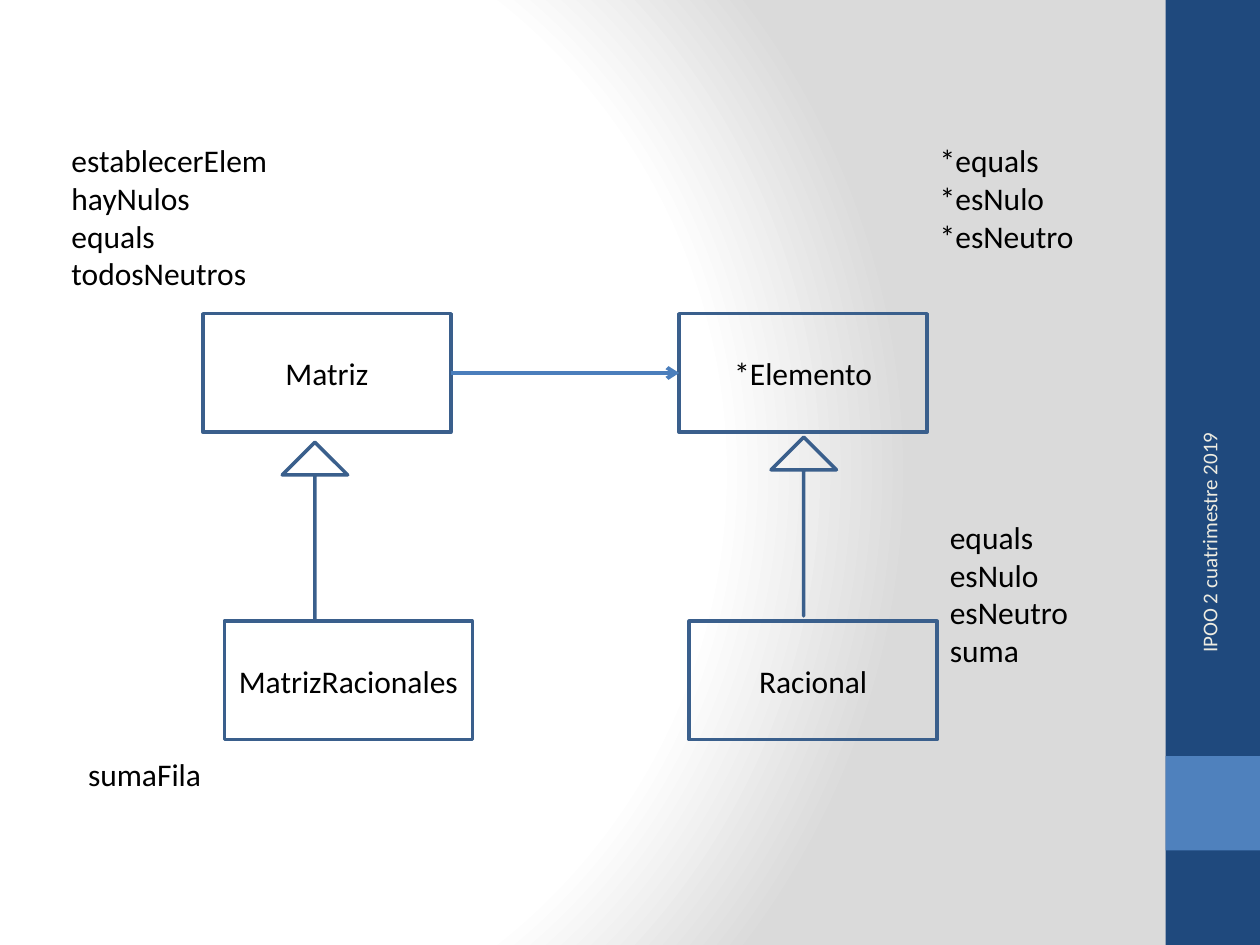
from dataclasses import dataclass

from pptx import Presentation
from pptx.dml.color import RGBColor
from pptx.enum.shapes import MSO_CONNECTOR as Connector, MSO_SHAPE as Preset
from pptx.enum.text import MSO_ANCHOR as Anchor, MSO_AUTO_SIZE as AutoSize, PP_ALIGN as Align
from pptx.oxml import parse_xml
from pptx.oxml.ns import nsdecls
from pptx.util import Pt


@dataclass(frozen=True)
class Theme:
    font: str = "Calibri"
    body_size: float = 18
    footer_size: float = 12
    text: str = "000000"
    footer_text: str = "EEECE1"
    sidebar: str = "1F497D"
    accent: str = "4F81BD"
    outline: str = "3A5F8C"
    association: str = "4B7EBC"
    outline_width: float = 2
    association_width: float = 2.25
    background_stops: tuple = ((0, "FFFFFF"), (75, "FFFFFF"), (100, "DADADA"))
    background_focus: tuple = (("l", 20), ("t", 50), ("r", 100), ("b", 50))


THEME = Theme()
CLASS_WIDTH, CLASS_HEIGHT = 141.8, 67.7
ARROW_WIDTH, ARROW_HEIGHT = 37.4, 102.2
TOP_ROW, BOTTOM_ROW = 179.3, 355


def write_text(frame, text, size=THEME.body_size, color=THEME.text,
               align=Align.LEFT, anchor=Anchor.TOP, wrap=True):
    """Write each line of the text as a paragraph with one format."""
    frame.word_wrap = wrap
    frame.vertical_anchor = anchor
    for index, line in enumerate(text.split("\n")):
        paragraph = frame.paragraphs[0] if index == 0 else frame.add_paragraph()
        paragraph.alignment = align
        run = paragraph.add_run()
        run.text = line
        run.font.name = THEME.font
        run.font.size = Pt(size)
        run.font.color.rgb = RGBColor.from_string(color)


class DiagramSlide:
    def __init__(self, presentation, theme):
        self.theme = theme
        self.slide = presentation.slides.add_slide(presentation.slide_layouts[6])
        self.shapes = self.slide.shapes

    def background(self):
        self.slide.background.fill.solid()
        solid = self.slide.element.xpath("p:cSld/p:bg/p:bgPr/a:solidFill")[0]
        stops = "".join(
            f'<a:gs pos="{position * 1000}"><a:srgbClr val="{color}"/></a:gs>'
            for position, color in self.theme.background_stops)
        focus = " ".join(f'{side}="{value * 1000}"'
                         for side, value in self.theme.background_focus)
        gradient = parse_xml(
            f'<a:gradFill {nsdecls("a")} rotWithShape="1"><a:gsLst>{stops}</a:gsLst>'
            f'<a:path path="circle"><a:fillToRect {focus}/></a:path></a:gradFill>')
        solid.getparent().replace(solid, gradient)

    def _shape(self, preset, left, top, width, height):
        shape = self.shapes.add_shape(preset, Pt(left), Pt(top), Pt(width), Pt(height))
        shape.shadow.inherit = False
        return shape

    def _outlined(self, preset, left, top, width, height):
        shape = self._shape(preset, left, top, width, height)
        shape.fill.background()
        shape.line.color.rgb = RGBColor.from_string(self.theme.outline)
        shape.line.width = Pt(self.theme.outline_width)
        return shape

    def band(self, left, top, width, height, color):
        shape = self._shape(Preset.RECTANGLE, left, top, width, height)
        shape.fill.solid()
        shape.fill.fore_color.rgb = RGBColor.from_string(color)
        shape.line.fill.background()

    def class_box(self, name, left, top):
        shape = self._outlined(Preset.RECTANGLE, left, top, CLASS_WIDTH, CLASS_HEIGHT)
        write_text(shape.text_frame, name, align=Align.CENTER, anchor=Anchor.MIDDLE)
        return shape

    def inheritance(self, left, top):
        arrow = self._outlined(Preset.UP_ARROW, left, top, ARROW_WIDTH, ARROW_HEIGHT)
        arrow.adjustments[0] = 0
        arrow.adjustments[1] = 0.5

    def association(self, source, target):
        connector = self.shapes.add_connector(Connector.STRAIGHT, 0, 0, 0, 0)
        connector.begin_connect(source, 3)
        connector.end_connect(target, 1)
        connector.line.color.rgb = RGBColor.from_string(self.theme.association)
        connector.line.width = Pt(self.theme.association_width)
        connector.line._get_or_add_ln().append(
            parse_xml(f'<a:tailEnd {nsdecls("a")} type="arrow"/>'))
        connector.element.spPr.append(parse_xml(f'<a:effectLst {nsdecls("a")}/>'))

    def text_box(self, text, left, top, width, height, rotation=0, **text_format):
        box = self.shapes.add_textbox(Pt(left), Pt(top), Pt(width), Pt(height))
        box.rotation = rotation
        write_text(box.text_frame, text, **text_format)
        return box

    def method_list(self, text, left, top, width, height):
        box = self.text_box(text, left, top, width, height, wrap=False)
        box.text_frame.auto_size = AutoSize.SHAPE_TO_FIT_TEXT


def main():
    presentation = Presentation()
    presentation.slide_width, presentation.slide_height = Pt(720), Pt(540)
    diagram = DiagramSlide(presentation, THEME)

    # Background and sidebar
    diagram.background()
    diagram.band(666, 0, 54, 540, THEME.sidebar)
    diagram.band(666, 432, 54, 54, THEME.accent)
    diagram.text_box("IPOO 2 cuatrimestre 2019", 597.6, 319, 186.5, 28.8, rotation=270,
                     size=THEME.footer_size, color=THEME.footer_text,
                     align=Align.RIGHT, anchor=Anchor.MIDDLE)

    # Classes
    matrix = diagram.class_box("Matriz", 115.9, TOP_ROW)
    element = diagram.class_box("*Elemento", 388.1, TOP_ROW)
    diagram.class_box("Racional", 393.8, BOTTOM_ROW)
    diagram.class_box("MatrizRacionales", 128.2, BOTTOM_ROW)

    # Relations
    diagram.association(matrix, element)
    diagram.inheritance(161.3, 252.7)
    diagram.inheritance(440.6, 249.8)

    # Methods of each class
    diagram.method_list("establecerElem\nhayNulos\nequals\ntodosNeutros", 33.8, 77, 127.4, 94.3)
    diagram.method_list("sumaFila", 43.2, 427.7, 79.9, 28.8)
    diagram.method_list("*equals\n*esNulo\n*esNeutro", 529.9, 77, 92.2, 72.7)
    diagram.method_list("equals\nesNulo\nesNeutro\nsuma", 535.7, 292.3, 82.8, 94.3)

    presentation.save("out.pptx")


if __name__ == "__main__":
    main()
